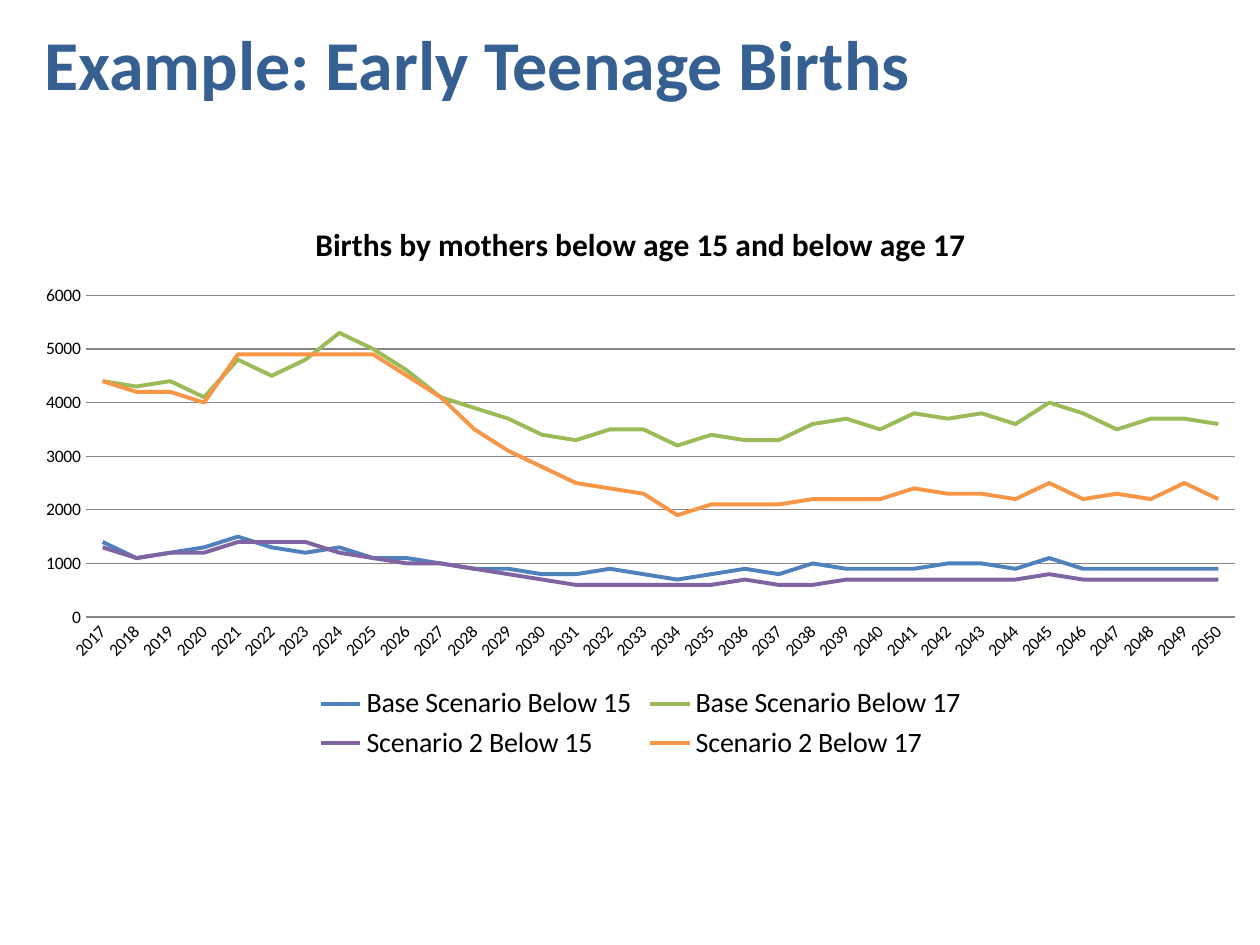
from dataclasses import dataclass

from pptx import Presentation
from pptx.chart.data import CategoryChartData as ChartData
from pptx.dml.color import RGBColor as Color
from pptx.enum.chart import XL_CHART_TYPE as ChartType
from pptx.enum.chart import XL_LEGEND_POSITION as LegendPosition
from pptx.enum.chart import XL_TICK_MARK as TickMark
from pptx.enum.text import MSO_ANCHOR as Anchor
from pptx.enum.text import PP_ALIGN as Align
from pptx.util import Inches, Pt


@dataclass(frozen=True)
class Theme:
    font: str = "Calibri"
    heading: str = "376092"
    ink: str = "000000"
    grid: str = "868686"
    title_size: float = 40
    chart_title_size: float = 18
    legend_size: float = 16
    axis_size: float = 10
    line_width: float = 2.25
    grid_width: float = 0.75


# Births per year, in hundreds: name, line colour, values
YEARS = range(2017, 2051)
SCENARIOS = [
    ("Base Scenario Below 15", "4F81BD",
     [14, 11, 12, 13, 15, 13, 12, 13, 11, 11, 10, 9, 9, 8, 8, 9, 8,
      7, 8, 9, 8, 10, 9, 9, 9, 10, 10, 9, 11, 9, 9, 9, 9, 9]),
    ("Base Scenario Below 17", "9BBB59",
     [44, 43, 44, 41, 48, 45, 48, 53, 50, 46, 41, 39, 37, 34, 33, 35, 35,
      32, 34, 33, 33, 36, 37, 35, 38, 37, 38, 36, 40, 38, 35, 37, 37, 36]),
    ("Scenario 2 Below 15", "8064A2",
     [13, 11, 12, 12, 14, 14, 14, 12, 11, 10, 10, 9, 8, 7, 6, 6, 6,
      6, 6, 7, 6, 6, 7, 7, 7, 7, 7, 7, 8, 7, 7, 7, 7, 7]),
    ("Scenario 2 Below 17", "F79646",
     [44, 42, 42, 40, 49, 49, 49, 49, 49, 45, 41, 35, 31, 28, 25, 24, 23,
      19, 21, 21, 21, 22, 22, 22, 24, 23, 23, 22, 25, 22, 23, 22, 25, 22]),
]


def set_attributes(target, values):
    for name, value in values.items():
        setattr(target, name, value)


class SlideBuilder:
    def __init__(self, slide, theme):
        self.slide = slide
        self.theme = theme

    def style_font(self, font, size, color, bold=False):
        set_attributes(font, {"name": self.theme.font, "size": Pt(size), "bold": bold})
        font.color.rgb = Color.from_string(color)

    def style_line(self, line, color, width):
        line.color.rgb = Color.from_string(color)
        line.width = Pt(width)

    def title(self, text, left, top, width, height):
        box = self.slide.shapes.title
        set_attributes(box, {"left": Inches(left), "top": Inches(top),
                             "width": Inches(width), "height": Inches(height)})
        set_attributes(box.text_frame, {"vertical_anchor": Anchor.MIDDLE, "word_wrap": True})
        para = box.text_frame.paragraphs[0]
        para.alignment = Align.LEFT
        span = para.add_run()
        span.text = text
        self.style_font(span.font, self.theme.title_size, self.theme.heading, bold=True)

    def line_chart(self, heading, categories, series, left, top, width, height):
        theme = self.theme
        data = ChartData(number_format="General")
        data.categories = categories
        for name, _, values in series:
            data.add_series(name, values)
        chart = self.slide.shapes.add_chart(
            ChartType.LINE, Inches(left), Inches(top), Inches(width), Inches(height), data
        ).chart
        self.style_font(chart.font, theme.axis_size, theme.ink)

        # Chart heading
        chart.has_title = True
        chart.chart_title.include_in_layout = False
        span = chart.chart_title.text_frame.paragraphs[0].add_run()
        span.text = heading
        self.style_font(span.font, theme.chart_title_size, theme.ink, bold=True)

        # Legend
        chart.has_legend = True
        set_attributes(chart.legend, {"position": LegendPosition.BOTTOM,
                                      "include_in_layout": False})
        self.style_font(chart.legend.font, theme.legend_size, theme.ink)

        # Axes and gridlines
        for axis in (chart.category_axis, chart.value_axis):
            set_attributes(axis, {"major_tick_mark": TickMark.NONE,
                                  "minor_tick_mark": TickMark.NONE})
            self.style_font(axis.tick_labels.font, theme.axis_size, theme.ink)
        category_axis, value_axis = chart.category_axis, chart.value_axis
        self.style_line(category_axis.format.line, theme.grid, theme.grid_width)
        set_attributes(value_axis, {"minimum_scale": 0, "maximum_scale": 6000,
                                    "major_unit": 1000, "has_major_gridlines": True})
        self.style_line(value_axis.major_gridlines.format.line, theme.grid, theme.grid_width)
        value_axis.format.line.fill.background()

        # Slanted year labels
        label_body = category_axis._element.txPr.bodyPr
        label_body.set("rot", "-2700000")
        label_body.set("vert", "horz")

        # Series lines
        plot = chart.plots[0]
        plot.vary_by_categories = False
        for line, (_, color, _) in zip(plot.series, series):
            line.smooth = False
            self.style_line(line.format.line, color, theme.line_width)


def main():
    deck = Presentation()
    set_attributes(deck, {"slide_width": Inches(10), "slide_height": Inches(7.5)})
    page = deck.slides.add_slide(deck.slide_layouts[5])
    builder = SlideBuilder(page, Theme())
    builder.title("Example: Early Teenage Births", 0.25, 0, 9.75, 1)
    births = [(name, color, [100 * value for value in hundreds])
              for name, color, hundreds in SCENARIOS]
    builder.line_chart("Births by mothers below age 15 and below age 17",
                       [str(year) for year in YEARS], births, 0.17, 1.58, 9.83, 4.5)
    deck.save("out.pptx")


if __name__ == "__main__":
    main()
